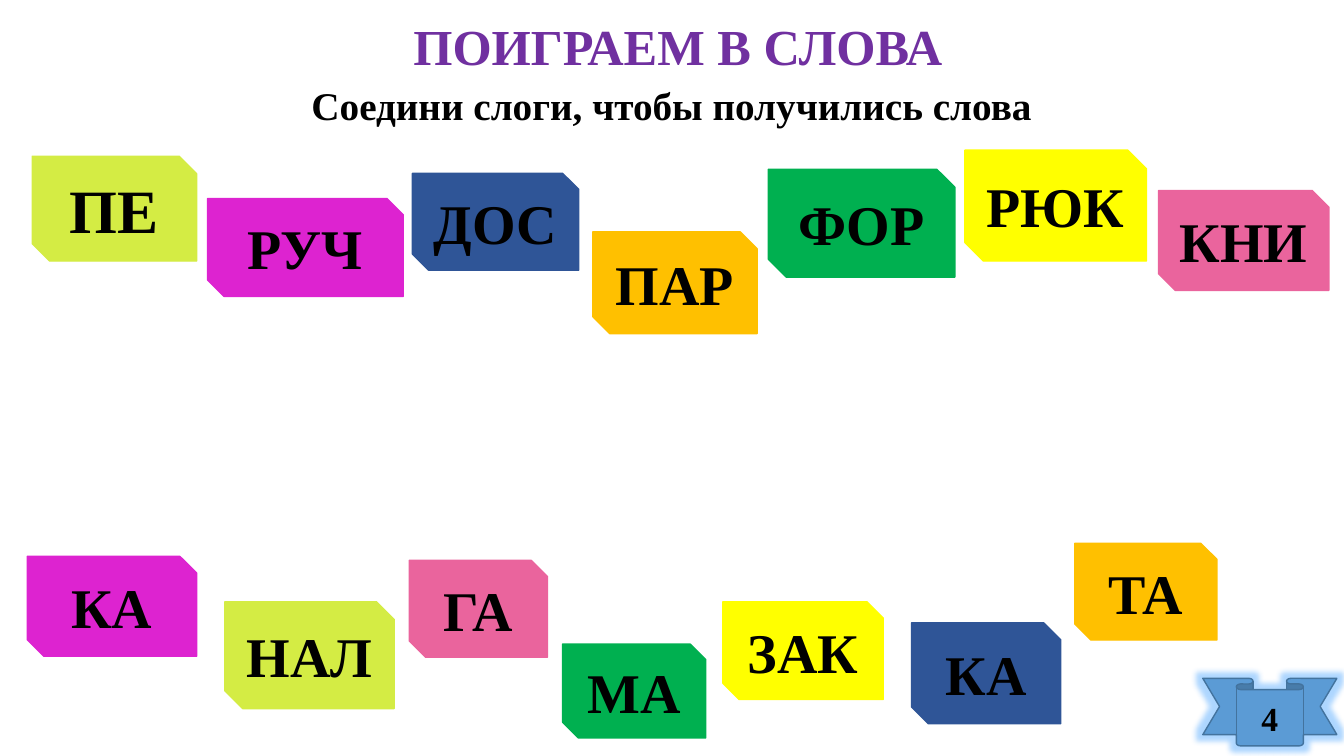
from lxml.etree import SubElement
from pptx import Presentation
from pptx.dml.color import RGBColor
from pptx.enum.shapes import MSO_SHAPE
from pptx.enum.text import MSO_ANCHOR, MSO_AUTO_SIZE, PP_ALIGN
from pptx.oxml.ns import qn
from pptx.util import Inches, Pt

LIME, PINK, BLUE = "D4EC44", "EA649D", "2F5597"
MAGENTA, ORANGE, GREEN, YELLOW = "DD23D0", "FFC000", "00B050", "FFFF00"

TOP = [
    ("ПЕ", LIME, 0.32, 1.55, 1.63, 1.04, 44),
    ("РУЧ", MAGENTA, 2.06, 1.97, 1.94, 0.97, 40),
    ("ДОС", BLUE, 4.09, 1.72, 1.65, 0.96, 40),
    ("ПАР", ORANGE, 5.88, 2.3, 1.63, 1.01, 40),
    ("ФОР", GREEN, 7.62, 1.68, 1.85, 1.07, 40),
    ("РЮК", YELLOW, 9.57, 1.49, 1.8, 1.1, 40),
    ("КНИ", PINK, 11.49, 1.89, 1.69, 0.99, 40),
]
BOTTOM = [
    ("КА", MAGENTA, 0.27, 5.52, 1.68, 0.99, 40),
    ("НАЛ", LIME, 2.23, 5.97, 1.68, 1.06, 40),
    ("ГА", PINK, 4.06, 5.56, 1.37, 0.96, 40),
    ("МА", GREEN, 5.58, 6.39, 1.42, 0.93, 40),
    ("ЗАК", YELLOW, 7.17, 5.97, 1.59, 0.97, 40),
    ("КА", BLUE, 9.04, 6.18, 1.48, 1, 40),
    ("ТА", ORANGE, 10.66, 5.39, 1.41, 0.96, 40),
]


def color(code):
    """Turn a hex string into a colour."""
    return RGBColor.from_string(code)


class Page:
    """Hold the text style and the current slide."""

    font = "Times New Roman"
    ink = "000000"

    def __init__(self, slide):
        """Keep the slide to draw on."""
        self.slide = slide

    def text(self, shape, words, size, ink, align, anchor):
        """Put one bold run into a shape."""
        frame = shape.text_frame
        frame.vertical_anchor = anchor
        para = frame.paragraphs[0]
        para.alignment = align
        run = para.add_run()
        run.text = words
        run.font.name = self.font
        run.font.size = Pt(size)
        run.font.bold = True
        run.font.color.rgb = color(ink)

    def line(self, shape, words, size, ink):
        """Set a single line that does not wrap."""
        shape.text_frame.word_wrap = False
        shape.text_frame.auto_size = MSO_AUTO_SIZE.NONE
        self.text(shape, words, size, ink, PP_ALIGN.LEFT, MSO_ANCHOR.TOP)

    def title(self, words, left, top, width, height, size, ink):
        """Place and fill the title."""
        shape = self.slide.shapes.title
        shape.left, shape.top = Inches(left), Inches(top)
        shape.width, shape.height = Inches(width), Inches(height)
        self.line(shape, words, size, ink)

    def label(self, words, left, top, width, height, size):
        """Add a text box."""
        box = self.slide.shapes.add_textbox(
            Inches(left), Inches(top), Inches(width), Inches(height))
        self.line(box, words, size, self.ink)

    def card(self, words, fill, left, top, width, height, size,
             kind=MSO_SHAPE.SNIP_2_DIAG_RECTANGLE, edge=None):
        """Add a filled shape with centred text."""
        shape = self.slide.shapes.add_shape(
            kind, Inches(left), Inches(top), Inches(width), Inches(height))
        shape.shadow.inherit = False
        shape.fill.solid()
        shape.fill.fore_color.rgb = color(fill)
        shape.line.color.rgb = color(edge or fill)
        shape.line.width = Pt(1)
        self.text(shape, words, size, self.ink, PP_ALIGN.CENTER, MSO_ANCHOR.MIDDLE)
        return shape

    def glow(self, shape, tint, size):
        """Surround a shape with a soft glow."""
        effects = shape.element.spPr.find(qn("a:effectLst"))
        halo = SubElement(effects, qn("a:glow"), rad=str(Pt(size)))
        tone = SubElement(halo, qn("a:srgbClr"), val=tint)
        SubElement(tone, qn("a:alpha"), val="40000")


def main():
    """Build and save the slide."""
    deck = Presentation()
    deck.slide_width, deck.slide_height = Inches(13.33), Inches(7.5)
    page = Page(deck.slides.add_slide(deck.slide_layouts[5]))
    ribbon = page.card("4", "5B9BD5", 11.93, 6.73, 1.33, 0.67, 24,
                       MSO_SHAPE.DOWN_RIBBON, "43739E")
    page.glow(ribbon, "3399FF", 8)
    page.title("ПОИГРАЕМ В СЛОВА", 4, 0.1, 5.5, 0.71, 36, "7030A0")
    for card in TOP + BOTTOM:
        page.card(*card)
    page.label("Соедини слоги, чтобы получились слова", 2.99, 0.76, 7.42, 0.57, 28)
    deck.save("out.pptx")


if __name__ == "__main__":
    main()
